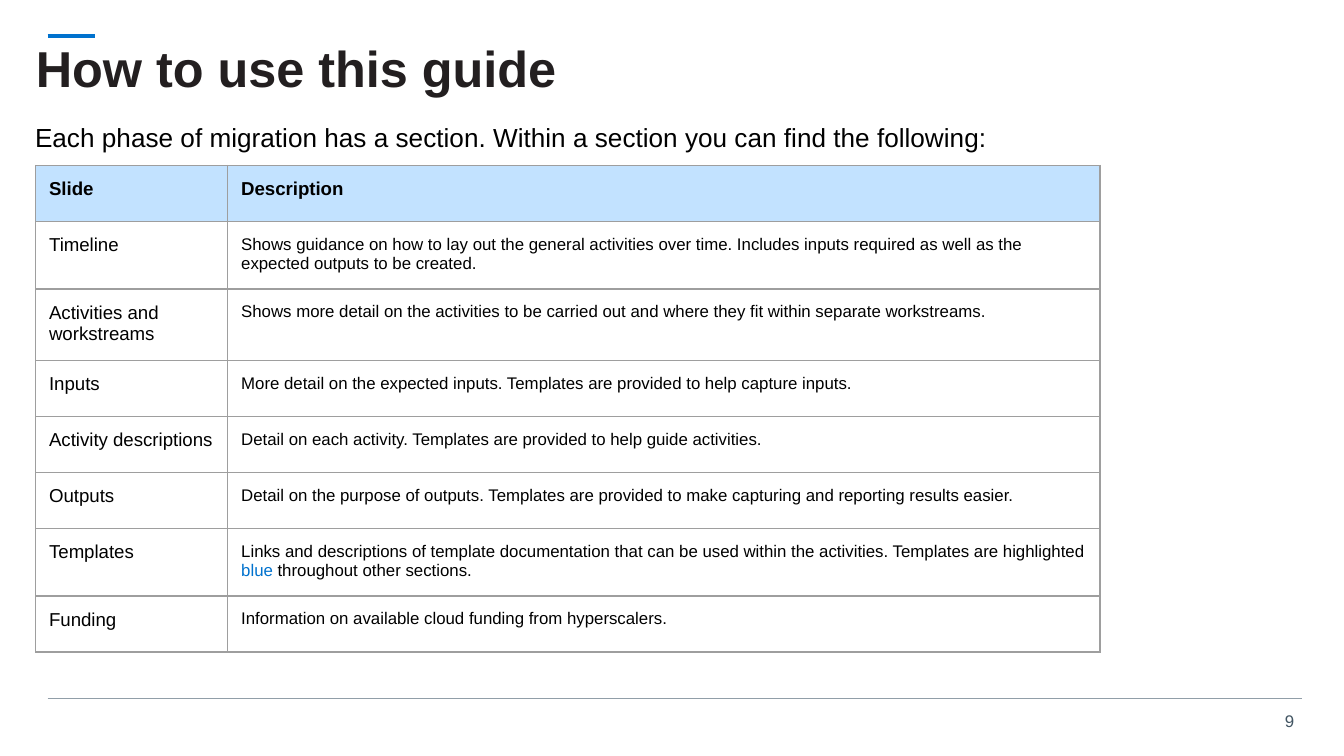
from dataclasses import dataclass

from lxml import etree
from pptx import Presentation
from pptx.dml.color import RGBColor
from pptx.enum.shapes import MSO_CONNECTOR
from pptx.enum.text import MSO_ANCHOR, PP_ALIGN
from pptx.oxml.ns import qn
from pptx.util import Pt

STRAIGHT = MSO_CONNECTOR.STRAIGHT
TOP, MIDDLE = MSO_ANCHOR.TOP, MSO_ANCHOR.MIDDLE
LEFT, RIGHT = PP_ALIGN.LEFT, PP_ALIGN.RIGHT


@dataclass(frozen=True)
class Theme:
    font: str = "Arial"
    ink: str = "000000"
    title: str = "231F20"
    accent: str = "0072CE"
    muted: str = "425563"
    rule: str = "919EA8"
    grid: str = "9E9E9E"
    head: str = "C2E2FF"
    title_size: float = 27
    intro_size: float = 14
    label_size: float = 10
    small_size: float = 9


THEME = Theme()
PAD = 7.2
COLS = (102.9, 467.3)
ROW = 30

# Each description is a list of (text, colour) runs.
ROWS = [
    ("Timeline", [("Shows guidance on how to lay out the general activities over time. "
                   "Includes inputs required as well as the expected outputs to be created.",
                   THEME.ink)]),
    ("Activities and workstreams", [("Shows more detail on the activities to be carried out "
                                     "and where they fit within separate workstreams.",
                                     THEME.ink)]),
    ("Inputs", [("More detail on the expected inputs. Templates are provided to help "
                 "capture inputs.", THEME.ink)]),
    ("Activity descriptions", [("Detail on each activity. Templates are provided to help "
                                "guide activities.", THEME.ink)]),
    ("Outputs", [("Detail on the purpose of outputs. Templates are provided to make "
                  "capturing and reporting results easier.", THEME.ink)]),
    ("Templates", [("Links and descriptions of template documentation that can be used "
                    "within the activities. Templates are highlighted ", THEME.ink),
                   ("blue", THEME.accent),
                   (" throughout other sections.", THEME.ink)]),
    ("Funding", [("Information on available cloud funding from hyperscalers.", THEME.ink)]),
]


def rgb(code):
    return RGBColor.from_string(code)


def set_pad(item, across, down):
    """Set the insets of a cell or a text frame."""
    item.margin_left = item.margin_right = Pt(across)
    item.margin_top = item.margin_bottom = Pt(down)


def set_font(para, size, bold=False):
    para.font.name = THEME.font
    para.font.size = Pt(size)
    para.font.bold = bold


def add_text(slide, text, box, size, color, bold=False, pad=(0, 0),
             align=LEFT, anchor=TOP):
    frame = slide.shapes.add_textbox(*map(Pt, box)).text_frame
    frame.word_wrap = True
    frame.vertical_anchor = anchor
    set_pad(frame, *pad)
    para = frame.paragraphs[0]
    para.text = text
    para.alignment = align
    set_font(para, size, bold)
    para.font.color.rgb = rgb(color)
    return para


def add_rule(slide, left, right, top, color, width):
    line = slide.shapes.add_connector(STRAIGHT, Pt(left), Pt(top), Pt(right), Pt(top))
    line.line.color.rgb = rgb(color)
    line.line.width = Pt(width)
    etree.SubElement(line._element.spPr, qn("a:effectLst"))


def add_edges(cell):
    """Draw the four borders; they must precede the cell's fill."""
    props = cell._tc.get_or_add_tcPr()
    for spot, side in enumerate(("lnL", "lnR", "lnT", "lnB")):
        edge = etree.Element(qn(f"a:{side}"), w=str(Pt(0.75)))
        fill = etree.SubElement(edge, qn("a:solidFill"))
        etree.SubElement(fill, qn("a:srgbClr"), val=THEME.grid)
        props.insert(spot, edge)


def fill_cell(cell, runs, size, bold=False, back=None):
    set_pad(cell, PAD, PAD)
    if back:
        cell.fill.solid()
        cell.fill.fore_color.rgb = rgb(back)
    else:
        cell.fill.background()
    add_edges(cell)
    para = cell.text_frame.paragraphs[0]
    set_font(para, size, bold)
    for text, color in runs:
        run = para.add_run()
        run.text = text
        run.font.color.rgb = rgb(color)


def add_guide(slide, left, top):
    count = len(ROWS) + 1
    table = slide.shapes.add_table(count, len(COLS), Pt(left), Pt(top),
                                   Pt(sum(COLS)), Pt(ROW * count)).table
    for col, width in zip(table.columns, COLS):
        col.width = Pt(width)
    for row in table.rows:
        row.height = Pt(ROW)
    for col, name in enumerate(("Slide", "Description")):
        fill_cell(table.cell(0, col), [(name, THEME.ink)], THEME.label_size,
                  True, THEME.head)
    for row, (label, runs) in enumerate(ROWS, 1):
        fill_cell(table.cell(row, 0), [(label, THEME.ink)], THEME.label_size)
        fill_cell(table.cell(row, 1), runs, THEME.small_size)


def main():
    deck = Presentation()
    deck.slide_width, deck.slide_height = Pt(720), Pt(405)
    slide = deck.slides.add_slide(deck.slide_layouts[6])

    add_text(slide, "9", (676, 378, 22.3, 16.6), THEME.small_size, THEME.muted,
             pad=(5, 2.9), align=RIGHT)
    add_rule(slide, 25.5, 51, 19.3, THEME.accent, 2)
    add_rule(slide, 25.5, 697.5, 374.2, THEME.rule, 0.75)
    title = add_text(slide, "How to use this guide", (19.2, 19.2, 505.4, 38.2),
                     THEME.title_size, THEME.title, bold=True, anchor=MIDDLE)
    title.line_spacing = 0.9
    add_text(slide, "Each phase of migration has a section. "
             "Within a section you can find the following:",
             (11.7, 57.9, 619.2, 48.2), THEME.intro_size, THEME.ink, pad=(PAD, PAD))
    add_guide(slide, 19.1, 88.7)
    deck.save("out.pptx")


if __name__ == "__main__":
    main()
